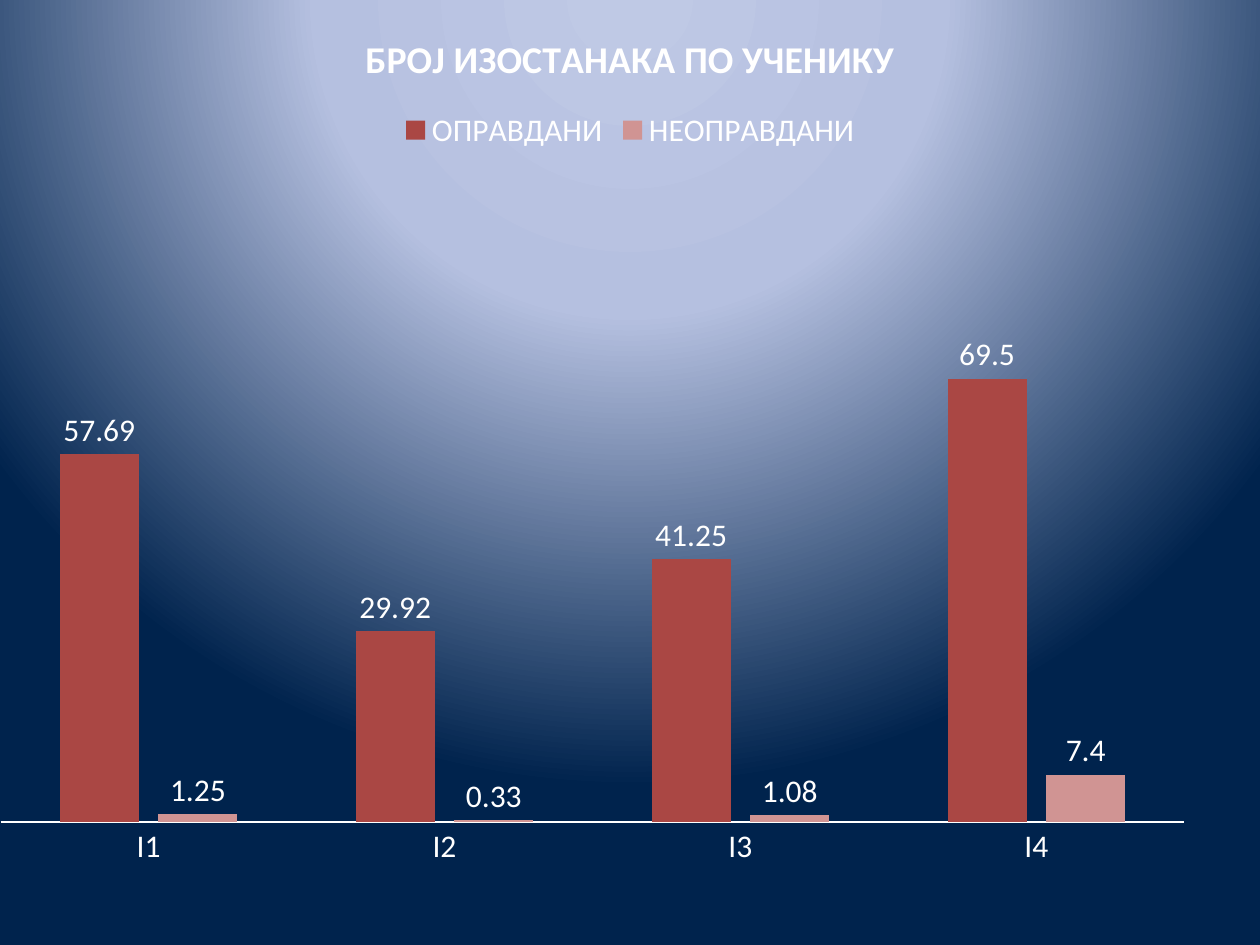
import pptx
import pptx.chart.data
import pptx.dml.color
import pptx.enum.chart
import pptx.oxml
import pptx.oxml.ns
import pptx.util

COLORS = {
    "text": "FFFFFF",
    "excused": "AA4744",
    "unexcused": "D09493",
    "glow": "BFC9E5",
    "halo": "B5C0E0",
    "night": "00234D",
}
CLASSES = ["I1", "I2", "I3", "I4"]
ABSENCES = {
    "ОПРАВДАНИ": ("excused", [57.69, 29.92, 41.25, 69.5]),
    "НЕОПРАВДАНИ": ("unexcused", [1.25, 0.33, 1.08, 7.4]),
}
PLOT_AREA = {"x": 0, "y": 0.33, "w": 0.94, "h": 0.54}


def rgb(name):
    return pptx.dml.color.RGBColor.from_string(COLORS[name])


def apply(target, values):
    for attribute, value in values.items():
        setattr(target, attribute, value)


class Deck:
    """Holds the text style and the current slide."""

    def __init__(self, width, height):
        self.presentation = pptx.Presentation()
        self.presentation.slide_width = pptx.util.Inches(width)
        self.presentation.slide_height = pptx.util.Inches(height)
        self.text_style = {"name": "Calibri", "size": pptx.util.Pt(18), "bold": False}
        self.title_style = {"name": "Calibri", "size": pptx.util.Pt(21.6), "bold": True}
        self.slide = None

    def add_slide(self):
        blank = self.presentation.slide_layouts[6]
        self.slide = self.presentation.slides.add_slide(blank)

    def style_font(self, font, style):
        apply(font, style)
        font.color.rgb = rgb("text")

    def radial_background(self, stops):
        """Fill the background with rings centred above the slide."""
        gradient = "".join(
            f'<a:gs pos="{share * 1000}"><a:srgbClr val="{COLORS[name]}"/></a:gs>'
            for share, name in stops
        )
        background = pptx.oxml.parse_xml(
            f'<p:bg {pptx.oxml.ns.nsdecls("p", "a")}><p:bgPr>'
            f'<a:gradFill rotWithShape="1"><a:gsLst>{gradient}</a:gsLst>'
            '<a:path path="circle">'
            '<a:fillToRect l="50000" t="-80000" r="50000" b="180000"/>'
            "</a:path></a:gradFill><a:effectLst/></p:bgPr></p:bg>"
        )
        self.slide.element.cSld.insert(0, background)

    def column_chart(self, title, categories, series, left, top, width, height):
        """Add a column chart; its box is given in shares of the slide."""
        data = pptx.chart.data.CategoryChartData()
        data.categories = categories
        for name, (_, values) in series.items():
            data.add_series(name, values)
        across, down = self.presentation.slide_width, self.presentation.slide_height
        chart = self.slide.shapes.add_chart(
            pptx.enum.chart.XL_CHART_TYPE.COLUMN_CLUSTERED,
            int(left * across), int(top * down),
            int(width * across), int(height * down), data,
        ).chart
        self.style_font(chart.font, self.text_style)

        chart.has_title = True
        heading = chart.chart_title.text_frame
        heading.text = title
        self.style_font(heading.paragraphs[0].runs[0].font, self.title_style)

        chart.has_legend = True
        apply(chart.legend, {
            "position": pptx.enum.chart.XL_LEGEND_POSITION.TOP,
            "include_in_layout": False,
        })
        self.style_font(chart.legend.font, self.text_style)
        self.format_axes(chart)
        self.format_columns(chart.plots[0], series)
        self.place_plot(chart, PLOT_AREA)

    def format_axes(self, chart):
        no_tick = pptx.enum.chart.XL_TICK_MARK.NONE
        apply(chart.value_axis, {
            "visible": False,
            "has_major_gridlines": False,
            "minimum_scale": 0,
            "maximum_scale": 80,
        })
        apply(chart.category_axis, {
            "major_tick_mark": no_tick,
            "minor_tick_mark": no_tick,
        })
        baseline = chart.category_axis.format.line
        baseline.color.rgb = rgb("text")
        baseline.width = pptx.util.Pt(0.75)
        self.style_font(chart.category_axis.tick_labels.font, self.text_style)

    def format_columns(self, plot, series):
        apply(plot, {"gap_width": 150, "overlap": -25, "vary_by_categories": False})
        for columns, (color, _) in zip(plot.series, series.values()):
            columns.format.fill.solid()
            columns.format.fill.fore_color.rgb = rgb(color)
            columns.invert_if_negative = False
            apply(columns.data_labels, {
                "show_value": True,
                "position": pptx.enum.chart.XL_LABEL_POSITION.OUTSIDE_END,
            })
            self.style_font(columns.data_labels.font, self.text_style)

    def place_plot(self, chart, area):
        """Fix the inner plot area, in shares of the chart."""
        modes = "".join(f'<c:{side}Mode val="edge"/>' for side in "xy")
        shares = "".join(f'<c:{key} val="{share}"/>' for key, share in area.items())
        layout = pptx.oxml.parse_xml(
            f'<c:layout {pptx.oxml.ns.nsdecls("c")}><c:manualLayout>'
            f'<c:layoutTarget val="inner"/>{modes}{shares}'
            "</c:manualLayout></c:layout>"
        )
        plot_area = chart.element.chart.plotArea
        for automatic in plot_area.findall(pptx.oxml.ns.qn("c:layout")):
            plot_area.remove(automatic)
        plot_area.insert(0, layout)


def main():
    deck = Deck(10, 7.5)
    deck.add_slide()
    deck.radial_background([(0, "glow"), (40, "halo"), (100, "night")])
    deck.column_chart("БРОЈ ИЗОСТАНАКА ПО УЧЕНИКУ", CLASSES, ABSENCES, 0, 0, 1, 1)
    deck.presentation.save("out.pptx")


if __name__ == "__main__":
    main()
